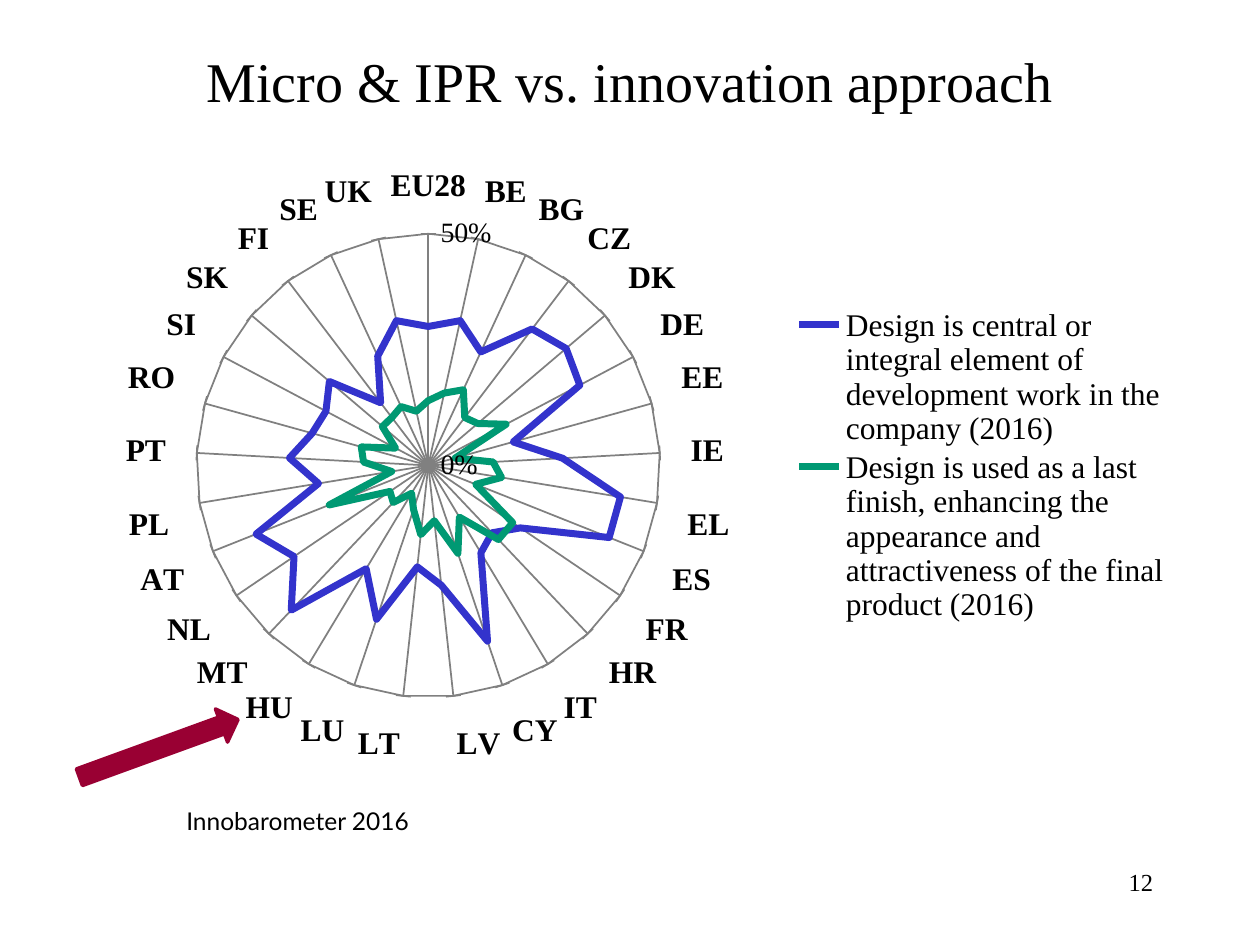
from dataclasses import dataclass

import pptx
import pptx.chart.data
import pptx.dml.color
import pptx.enum.chart
import pptx.enum.shapes
import pptx.enum.text
import pptx.oxml
import pptx.oxml.ns
import pptx.util

Inches = pptx.util.Inches
Pt = pptx.util.Pt
RGBColor = pptx.dml.color.RGBColor
Align = pptx.enum.text.PP_ALIGN
Anchor = pptx.enum.text.MSO_ANCHOR

BLACK = RGBColor(0x00, 0x00, 0x00)
GREY = RGBColor(0x80, 0x80, 0x80)
BLUE = RGBColor(0x33, 0x33, 0xCC)
GREEN = RGBColor(0x00, 0x99, 0x73)
CRIMSON = RGBColor(0x99, 0x00, 0x33)
SERIF = "Times New Roman"

COUNTRIES = (
    "EU28 BE BG CZ DK DE EE IE EL ES FR HR IT CY LV "
    "LT LU HU MT NL AT PL PT RO SI SK FI SE UK"
).split()


@dataclass(frozen=True)
class Approach:
    name: str
    color: RGBColor
    percents: tuple[int, ...]


APPROACHES = (
    Approach(
        "Design is central or integral element of development work in the company (2016)",
        BLUE,
        (30, 32, 27, 37, 39, 37, 19, 29, 42, 42, 24, 20, 22, 40, 26,
         22, 35, 26, 43, 35, 40, 24, 30, 26, 25, 28, 17, 26, 32),
    ),
    Approach(
        "Design is used as a last finish, enhancing the appearance "
        "and attractiveness of the final product (2016)",
        GREEN,
        (14, 16, 18, 13, 14, 19, 6, 14, 16, 11, 22, 22, 13, 20, 12,
         15, 10, 7, 11, 10, 23, 8, 14, 15, 8, 13, 13, 14, 12),
    ),
)


def add_text(slide, text: str, *, left: float, top: float, width: float, height: float,
             size: int, font: str = SERIF, align=Align.LEFT, anchor=Anchor.TOP) -> None:
    frame = slide.shapes.add_textbox(
        Inches(left), Inches(top), Inches(width), Inches(height)).text_frame
    frame.word_wrap = True
    frame.vertical_anchor = anchor
    line = frame.paragraphs[0]
    line.text = text
    line.alignment = align
    line.font.size = Pt(size)
    line.font.name = font
    line.font.color.rgb = BLACK


def style_font(font, size: int, bold: bool = False) -> None:
    font.name = SERIF
    font.size = Pt(size)
    font.bold = bold
    font.color.rgb = BLACK


def style_line(line, color: RGBColor, width: float) -> None:
    line.color.rgb = color
    line.width = Pt(width)


def place_part(part, position: int, *, x: float, y: float, w: float, h: float,
               inner: bool = False) -> None:
    for previous in part.findall(pptx.oxml.ns.qn("c:layout")):
        part.remove(previous)
    target = '<c:layoutTarget val="inner"/>' if inner else ""
    modes = '<c:xMode val="edge"/><c:yMode val="edge"/>'
    sizes = "".join(f'<c:{tag} val="{value}"/>'
                    for tag, value in (("x", x), ("y", y), ("w", w), ("h", h)))
    part.insert(position, pptx.oxml.parse_xml(
        f'<c:layout {pptx.oxml.ns.nsdecls("c")}><c:manualLayout>'
        f"{target}{modes}{sizes}</c:manualLayout></c:layout>"))


def add_radar(slide, approaches: tuple[Approach, ...]) -> None:
    shares = pptx.chart.data.CategoryChartData(number_format="0%")
    shares.categories = COUNTRIES
    for approach in approaches:
        shares.add_series(approach.name, [percent / 100 for percent in approach.percents])
    radar = slide.shapes.add_chart(
        pptx.enum.chart.XL_CHART_TYPE.RADAR,
        Inches(0.59), Inches(1.15), Inches(8.78), Inches(5.04), shares).chart
    radar.has_title = False
    style_font(radar.font, 10)
    radar.plots[0].vary_by_categories = False
    for series, approach in zip(radar.plots[0].series, approaches):
        style_line(series.format.line, approach.color, 4)

    countries = radar.category_axis
    style_font(countries.tick_labels.font, 18, bold=True)
    scale = radar.value_axis
    style_font(scale.tick_labels.font, 16)
    scale.minimum_scale = 0
    scale.maximum_scale = 0.5
    scale.major_unit = 0.5
    scale.tick_labels.number_format = "0%"
    scale.tick_labels.number_format_is_linked = False
    for axis in (countries, scale):
        axis.has_major_gridlines = True
        axis.major_tick_mark = pptx.enum.chart.XL_TICK_MARK.CROSS
        style_line(axis.major_gridlines.format.line, GREY, 1)
        style_line(axis.format.line, GREY, 1)

    radar.has_legend = True
    radar.legend.position = pptx.enum.chart.XL_LEGEND_POSITION.RIGHT
    radar.legend.include_in_layout = False
    style_font(radar.legend.font, 18)
    chart_xml = radar.element.find(pptx.oxml.ns.qn("c:chart"))
    place_part(chart_xml.find(pptx.oxml.ns.qn("c:plotArea")), 0,
               x=0.11, y=0.14, w=0.42, h=0.73, inner=True)
    place_part(chart_xml.find(pptx.oxml.ns.qn("c:legend")), 1,
               x=0.65, y=0.25, w=0.34, h=0.51)


def add_pointer(slide) -> None:
    pointer = slide.shapes.add_shape(
        pptx.enum.shapes.MSO_SHAPE.RIGHT_ARROW,
        Inches(0.59), Inches(5.8), Inches(1.34), Inches(0.28))
    pointer.rotation = 340
    pointer.shadow.inherit = False
    pointer.fill.solid()
    pointer.fill.fore_color.rgb = CRIMSON
    style_line(pointer.line, CRIMSON, 2)


def main() -> None:
    deck = pptx.Presentation()
    deck.slide_width = Inches(10)
    deck.slide_height = Inches(7.5)
    slide = deck.slides.add_slide(deck.slide_layouts[6])
    add_text(slide, "12", left=7.17, top=6.83, width=2.08, height=0.5,
             size=14, align=Align.RIGHT)
    add_radar(slide, APPROACHES)
    add_text(slide, "Micro & IPR vs. innovation approach", left=0.75, top=0.36,
             width=8.5, height=0.56, size=32, align=Align.CENTER, anchor=Anchor.MIDDLE)
    add_text(slide, "Innobarometer 2016", left=1.38, top=6.35, width=2.28, height=0.34,
             size=14, font="Lato")
    add_pointer(slide)
    deck.save("out.pptx")


if __name__ == "__main__":
    main()
